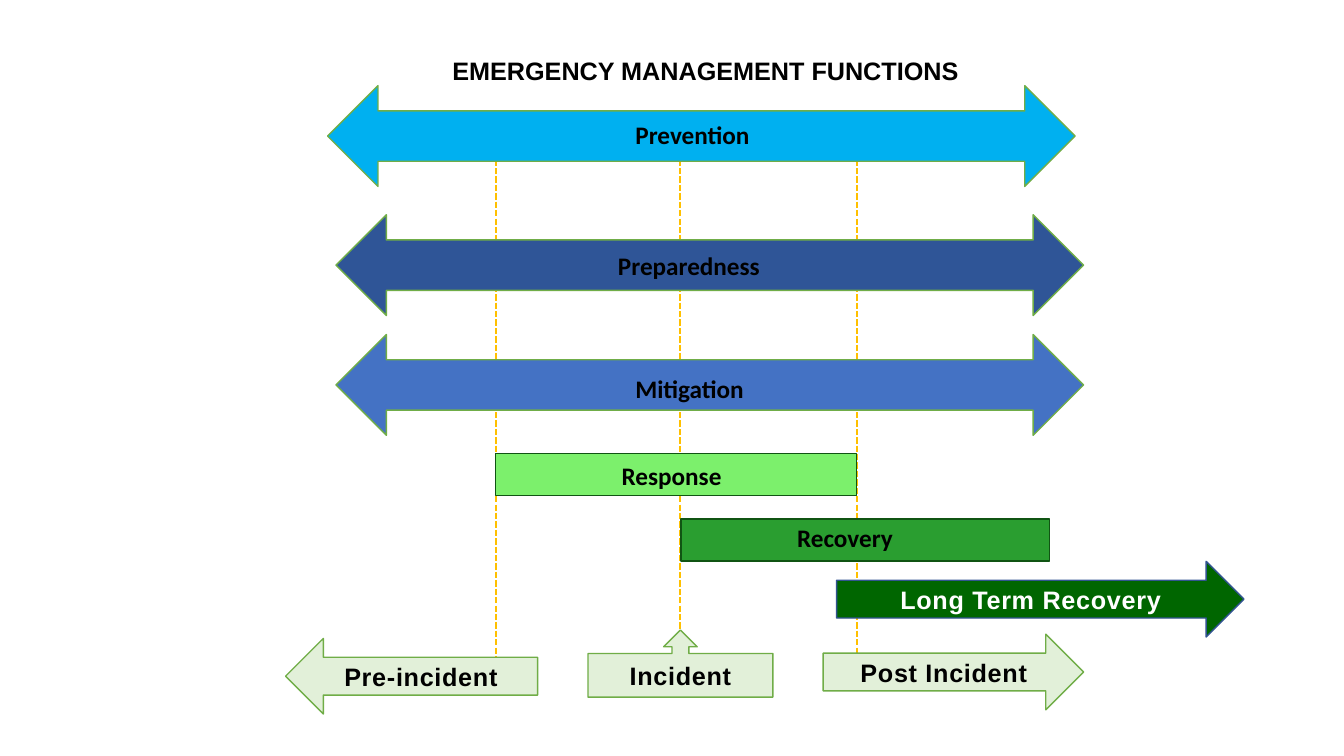
from lxml.etree import SubElement
from pptx import Presentation
from pptx.dml.color import RGBColor
from pptx.enum.dml import MSO_LINE
from pptx.enum.shapes import MSO_CONNECTOR, MSO_SHAPE as SHAPE
from pptx.enum.text import MSO_ANCHOR, PP_ALIGN
from pptx.oxml.ns import qn
from pptx.util import Pt

COLORS = {
    "black": "000000", "white": "FFFFFF", "guide": "FFC000",
    "prevention": "00B0F0", "preparedness": "2F5597", "mitigation": "4472C4",
    "response": "7CF06C", "recovery": "2A9E30", "long_term": "006600",
    "phase": "E2F0D9", "green_line": "70AD47", "dark_line": "105413",
    "blue_line": "325491",
}


def rgb(name):
    return RGBColor.from_string(COLORS[name])


def write(tf, text, font, color="black", align=PP_ALIGN.CENTER):
    tf.word_wrap = True
    tf.text = text
    p = tf.paragraphs[0]
    p.alignment = align
    p.font.name = font
    p.font.size = Pt(18)
    p.font.bold = True
    p.font.color.rgb = rgb(color)
    return p


prs = Presentation()
prs.slide_width, prs.slide_height = Pt(960), Pt(540)
s = prs.slides.add_slide(prs.slide_layouts[5])

title = s.shapes.title
title.left, title.top, title.width, title.height = Pt(234), Pt(36), Pt(540), Pt(29)
write(title.text_frame, "EMERGENCY MANAGEMENT FUNCTIONS", "Arial")

guides = [(486, 102, 474), (354, 96, 480), (612, 96, 474)]
for x, top, bottom in guides:
    line = s.shapes.add_connector(MSO_CONNECTOR.STRAIGHT, Pt(x), Pt(top), Pt(x), Pt(bottom))
    line.line.color.rgb = rgb("guide")
    line.line.width = Pt(1.5)
    line.line.dash_style = MSO_LINE.SQUARE_DOT
    SubElement(line._element.spPr, qn("a:effectLst"))

shapes = [
    (SHAPE.LEFT_RIGHT_ARROW, 234, 61.2, 534, 72, "prevention", "green_line", ""),
    (SHAPE.LEFT_RIGHT_ARROW, 240, 153.4, 534, 72, "preparedness", "green_line", ""),
    (SHAPE.LEFT_RIGHT_ARROW, 240, 239, 534, 72, "mitigation", "green_line", ""),
    (SHAPE.LEFT_ARROW, 204, 456, 180, 54, "phase", "green_line", "Pre-incident"),
    (SHAPE.FLOWCHART_PROCESS, 354, 324, 258, 30, "response", "dark_line", ""),
    (SHAPE.FLOWCHART_PROCESS, 486.5, 370.8, 263, 30, "recovery", "dark_line", ""),
    (SHAPE.RIGHT_ARROW, 588, 453, 186, 54, "phase", "green_line", "Post Incident"),
    (SHAPE.UP_ARROW_CALLOUT, 420, 450, 132, 48, "phase", "green_line", "Incident"),
    (SHAPE.RIGHT_ARROW, 597.6, 401, 291, 54, "long_term", "blue_line", "Long Term Recovery"),
]
for kind, x, y, w, h, fill, outline, text in shapes:
    sp = s.shapes.add_shape(kind, Pt(x), Pt(y), Pt(w), Pt(h))
    sp.shadow.inherit = False
    sp.fill.solid()
    sp.fill.fore_color.rgb = rgb(fill)
    sp.line.color.rgb = rgb(outline)
    sp.line.width = Pt(1)
    if text:
        sp.text_frame.vertical_anchor = MSO_ANCHOR.MIDDLE
        p = write(sp.text_frame, text, "Arial", "white" if fill == "long_term" else "black")
        p.runs[0].font._element.set("spc", "50")

labels = [
    ("Recovery", 562.3, 369.4, 98.6, PP_ALIGN.LEFT),
    ("Response", 437, 325.4, 125.3, PP_ALIGN.LEFT),
    ("Preparedness", 407.5, 175, 169.2, PP_ALIGN.CENTER),
    ("Mitigation", 432, 262.8, 121, PP_ALIGN.CENTER),
    ("Prevention", 432, 81.4, 125.3, PP_ALIGN.CENTER),
]
for text, x, y, w, align in labels:
    box = s.shapes.add_textbox(Pt(x), Pt(y), Pt(w), Pt(29))
    write(box.text_frame, text, "Calibri", align=align)

prs.save("out.pptx")
